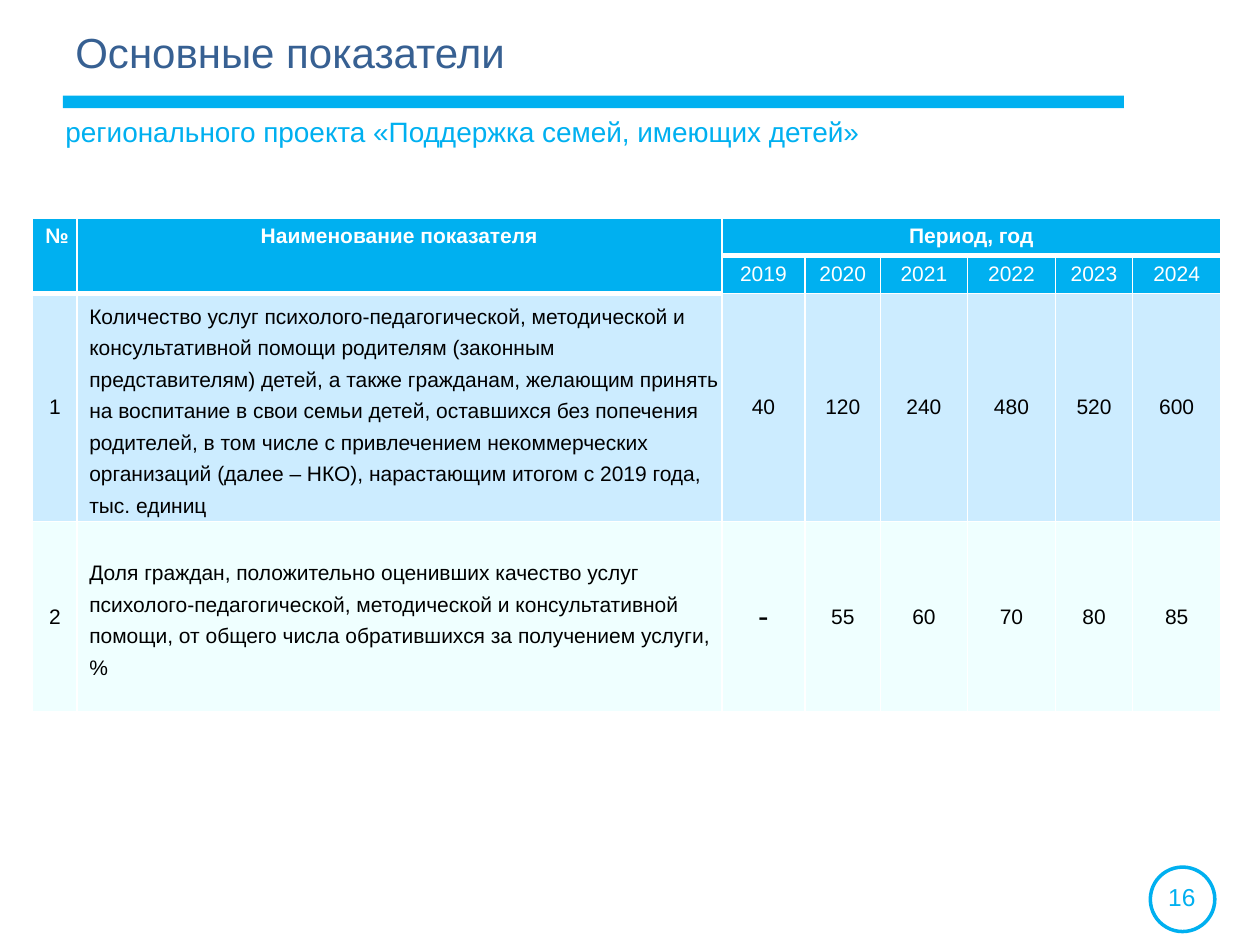
from dataclasses import dataclass

from lxml.etree import SubElement
from pptx import Presentation
from pptx.dml.color import RGBColor
from pptx.enum.shapes import MSO_SHAPE
from pptx.enum.text import MSO_ANCHOR, PP_ALIGN
from pptx.oxml.ns import qn
from pptx.util import Cm, Pt


@dataclass(frozen=True)
class Theme:
    font: str = "Arial"
    accent: str = "00B0F0"
    title: str = "376092"
    white: str = "FFFFFF"
    text: str = "000000"
    row_fills: tuple = ("CCECFF", "EFFFFF")
    title_size: int = 24
    subtitle_size: int = 16
    number_size: int = 14
    table_size: int = 12
    dash_size: int = 18
    thin_border: int = 1
    thick_border: int = 3


THEME = Theme()
COLUMN_WIDTHS = (0.89, 13, 1.68, 1.52, 1.75, 1.78, 1.55, 1.78)
ROW_HEIGHTS = (0.74, 0.76, 4.6, 3.84)
HEADER_ROWS = 2
LABEL_COLUMNS = 2
YEARS = ("2019", "2020", "2021", "2022", "2023", "2024")
INDICATORS = (
    ("Количество услуг психолого-педагогической, методической и "
     "консультативной помощи родителям (законным представителям) детей, "
     "а также гражданам, желающим принять на воспитание в свои семьи детей, "
     "оставшихся без попечения родителей, в том числе с привлечением "
     "некоммерческих организаций (далее – НКО), нарастающим итогом "
     "с 2019 года, тыс. единиц",
     ("40", "120", "240", "480", "520", "600")),
    ("Доля граждан, положительно оценивших качество услуг "
     "психолого-педагогической, методической и консультативной помощи, "
     "от общего числа обратившихся за получением услуги, %",
     ("-", "55", "60", "70", "80", "85")),
)


def set_attributes(target, values):
    for name, value in values.items():
        setattr(target, name, value)


def write_text(frame, text, size, color, alignment=PP_ALIGN.LEFT, bold=False):
    paragraph = frame.paragraphs[0]
    paragraph.alignment = alignment
    run = paragraph.add_run()
    run.text = text
    set_attributes(run.font, {"name": THEME.font, "size": Pt(size), "bold": bold})
    run.font.color.rgb = RGBColor.from_string(color)


def add_text(slide, box, text, size, color, alignment=PP_ALIGN.LEFT):
    frame = slide.shapes.add_textbox(*map(Cm, box)).text_frame
    frame.word_wrap = True
    write_text(frame, text, size, color, alignment)


def add_title_bar(slide):
    shape = slide.shapes.add_shape(MSO_SHAPE.RECTANGLE, *map(Cm, (1.27, 1.93, 21.39, 0.25)))
    shape.shadow.inherit = False
    shape.fill.solid()
    shape.fill.fore_color.rgb = RGBColor.from_string(THEME.accent)
    shape.line.fill.background()


def add_page_number(slide, number):
    shape = slide.shapes.add_shape(MSO_SHAPE.OVAL, *map(Cm, (23.19, 17.48, 1.3, 1.3)))
    shape.shadow.inherit = False
    shape.fill.background()
    shape.line.color.rgb = RGBColor.from_string(THEME.accent)
    shape.line.width = Pt(2)
    add_text(slide, (23.09, 17.65, 1.47, 0.86), number,
             THEME.number_size, THEME.accent, PP_ALIGN.CENTER)


def style_cell(cell, fill, bottom_border):
    """Draw white borders, then the fill, in the order the schema asks for."""
    properties = cell._tc.get_or_add_tcPr()
    widths = dict.fromkeys(("lnL", "lnR", "lnT"), THEME.thin_border)
    widths["lnB"] = bottom_border
    for side, width in widths.items():
        line = SubElement(properties, qn(f"a:{side}"), w=str(Pt(width)))
        solid = SubElement(line, qn("a:solidFill"))
        SubElement(solid, qn("a:srgbClr"), val=THEME.white)
    cell.fill.solid()
    cell.fill.fore_color.rgb = RGBColor.from_string(fill)


def style_grid(table):
    for row in range(len(ROW_HEIGHTS)):
        fill = THEME.accent if row < HEADER_ROWS else THEME.row_fills[row - HEADER_ROWS]
        for column in range(len(COLUMN_WIDTHS)):
            is_thick = row == 0 or (row < HEADER_ROWS and column < LABEL_COLUMNS)
            border = THEME.thick_border if is_thick else THEME.thin_border
            style_cell(table.cell(row, column), fill, border)


def fill_header(table):
    last_column = len(COLUMN_WIDTHS) - 1
    headings = (("№", 0, (1, 0)),
                ("Наименование показателя", 1, (1, 1)),
                ("Период, год", LABEL_COLUMNS, (0, last_column)))
    for text, column, end in headings:
        cell = table.cell(0, column)
        cell.merge(table.cell(*end))
        write_text(cell.text_frame, text, THEME.table_size, THEME.white,
                   PP_ALIGN.CENTER, bold=True)
    for column, year in enumerate(YEARS, LABEL_COLUMNS):
        write_text(table.cell(1, column).text_frame, year, THEME.table_size,
                   THEME.white, PP_ALIGN.CENTER)


def fill_name(cell, name):
    set_attributes(cell, {
        "margin_left": Cm(0.05), "margin_right": Cm(0.05),
        "margin_top": 0, "margin_bottom": 0,
        "vertical_anchor": MSO_ANCHOR.MIDDLE,
    })
    write_text(cell.text_frame, name, THEME.table_size, THEME.text)
    paragraph = cell.text_frame.paragraphs[0]
    paragraph.line_spacing = Pt(18)
    paragraph._p.get_or_add_pPr().set("marL", str(Cm(0.2)))


def fill_indicator(table, row, number, name, values):
    fill_name(table.cell(row, 1), name)
    centred = {0: str(number), **dict(enumerate(values, LABEL_COLUMNS))}
    for column, text in centred.items():
        cell = table.cell(row, column)
        cell.vertical_anchor = MSO_ANCHOR.MIDDLE
        size = THEME.dash_size if text == "-" else THEME.table_size
        write_text(cell.text_frame, text, size, THEME.text, PP_ALIGN.CENTER)


def add_indicator_table(slide):
    table = slide.shapes.add_table(
        len(ROW_HEIGHTS), len(COLUMN_WIDTHS), Cm(0.66), Cm(4.39),
        Cm(sum(COLUMN_WIDTHS)), Cm(sum(ROW_HEIGHTS))).table
    for column, width in zip(table.columns, COLUMN_WIDTHS):
        column.width = Cm(width)
    for row, height in zip(table.rows, ROW_HEIGHTS):
        row.height = Cm(height)
    style_grid(table)
    fill_header(table)
    for number, (name, values) in enumerate(INDICATORS, 1):
        fill_indicator(table, HEADER_ROWS + number - 1, number, name, values)


def main():
    presentation = Presentation()
    set_attributes(presentation, {"slide_width": Cm(25.4), "slide_height": Cm(19.05)})
    slide = presentation.slides.add_slide(presentation.slide_layouts[6])
    add_title_bar(slide)
    add_page_number(slide, "16")
    add_text(slide, (1.07, 2.18, 21.74, 1.24),
             "регионального проекта «Поддержка семей, имеющих детей»",
             THEME.subtitle_size, THEME.accent)
    add_text(slide, (1.27, 0.41, 19.79, 1.63), "Основные показатели",
             THEME.title_size, THEME.title)
    add_indicator_table(slide)
    presentation.save("out.pptx")


if __name__ == "__main__":
    main()
